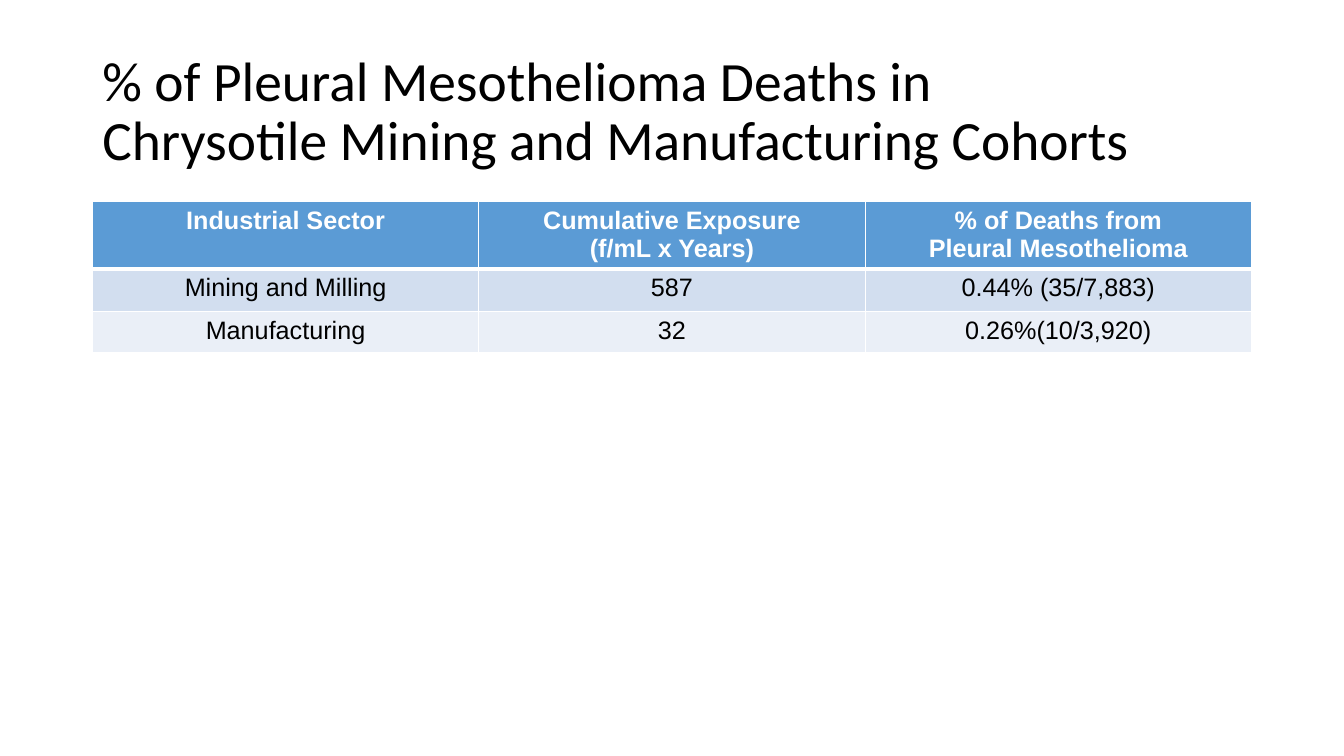
from lxml import etree
from pptx import Presentation
from pptx import util as u
from pptx.dml.color import RGBColor
from pptx.enum import text
from pptx.oxml.ns import qn

LEFT, WIDTH = u.Cm(2.33), u.Cm(29.21)
ROW_HEIGHTS = [1.7, 1.06, 1.04]
ROW_FILLS = ["5B9BD5", "D2DEEF", "EAEFF7"]
MORTALITY = [
    ["Industrial Sector", "Cumulative Exposure\n(f/mL x Years)",
     "% of Deaths from\nPleural Mesothelioma"],
    ["Mining and Milling", "587", "0.44% (35/7,883)"],
    ["Manufacturing", "32", "0.26%(10/3,920)"],
]
TITLE_FORMAT = {"name": "Calibri", "size": u.Pt(39.6)}
HEADER_FORMAT = {"name": "Arial", "size": u.Pt(18), "bold": True}
BODY_FORMAT = {"name": "Arial", "size": u.Pt(18), "bold": False}


def color(hex_value):
    """Turn a hex string into a colour."""
    return RGBColor.from_string(hex_value)


def write_text(frame, content, font_format, hex_value, **paragraph_format):
    """Fill a text frame and format its paragraphs and runs."""
    frame.text = content
    for paragraph in frame.paragraphs:
        for name, value in paragraph_format.items():
            setattr(paragraph, name, value)
        for run in paragraph.runs:
            for name, value in font_format.items():
                setattr(run.font, name, value)
            run.font.color.rgb = color(hex_value)


def add_borders(cell, widths, hex_value):
    """Draw the cell's borders, with one width in points for each side."""
    properties = cell._tc.get_or_add_tcPr()
    for side, width in widths.items():
        line = etree.SubElement(properties, qn(f"a:ln{side}"), w=str(u.Pt(width)))
        fill = etree.SubElement(line, qn("a:solidFill"))
        etree.SubElement(fill, qn("a:srgbClr"), val=hex_value)


def add_title(slide, content):
    """Add the slide heading."""
    shape = slide.shapes.add_textbox(LEFT, u.Cm(1.01), WIDTH, u.Cm(3.68))
    shape.text_frame.word_wrap = True
    shape.text_frame.vertical_anchor = text.MSO_ANCHOR.MIDDLE
    write_text(shape.text_frame, content, TITLE_FORMAT, "000000", line_spacing=0.9)


def add_mortality_table(slide, rows):
    """Add the table with a header row and banded body rows."""
    height = u.Cm(sum(ROW_HEIGHTS))
    table = slide.shapes.add_table(
        len(rows), len(rows[0]), LEFT, u.Cm(5.08), WIDTH, height).table
    for index, values in enumerate(rows):
        table.rows[index].height = u.Cm(ROW_HEIGHTS[index])
        is_header = index == 0
        widths = {"L": 1, "R": 1, "T": 3 if index == 1 else 1, "B": 3 if is_header else 1}
        for column, value in enumerate(values):
            cell = table.cell(index, column)
            write_text(cell.text_frame, value,
                       HEADER_FORMAT if is_header else BODY_FORMAT,
                       "FFFFFF" if is_header else "000000",
                       alignment=text.PP_ALIGN.CENTER)
            add_borders(cell, widths, "FFFFFF")
            cell.fill.solid()
            cell.fill.fore_color.rgb = color(ROW_FILLS[index])


def main():
    """Build and save the presentation."""
    presentation = Presentation()
    presentation.slide_width, presentation.slide_height = u.Cm(33.87), u.Cm(19.05)
    slide = presentation.slides.add_slide(presentation.slide_layouts[6])
    add_mortality_table(slide, MORTALITY)
    add_title(slide, "% of Pleural Mesothelioma Deaths in\v"
                     "Chrysotile Mining and Manufacturing Cohorts")
    presentation.save("out.pptx")


if __name__ == "__main__":
    main()
